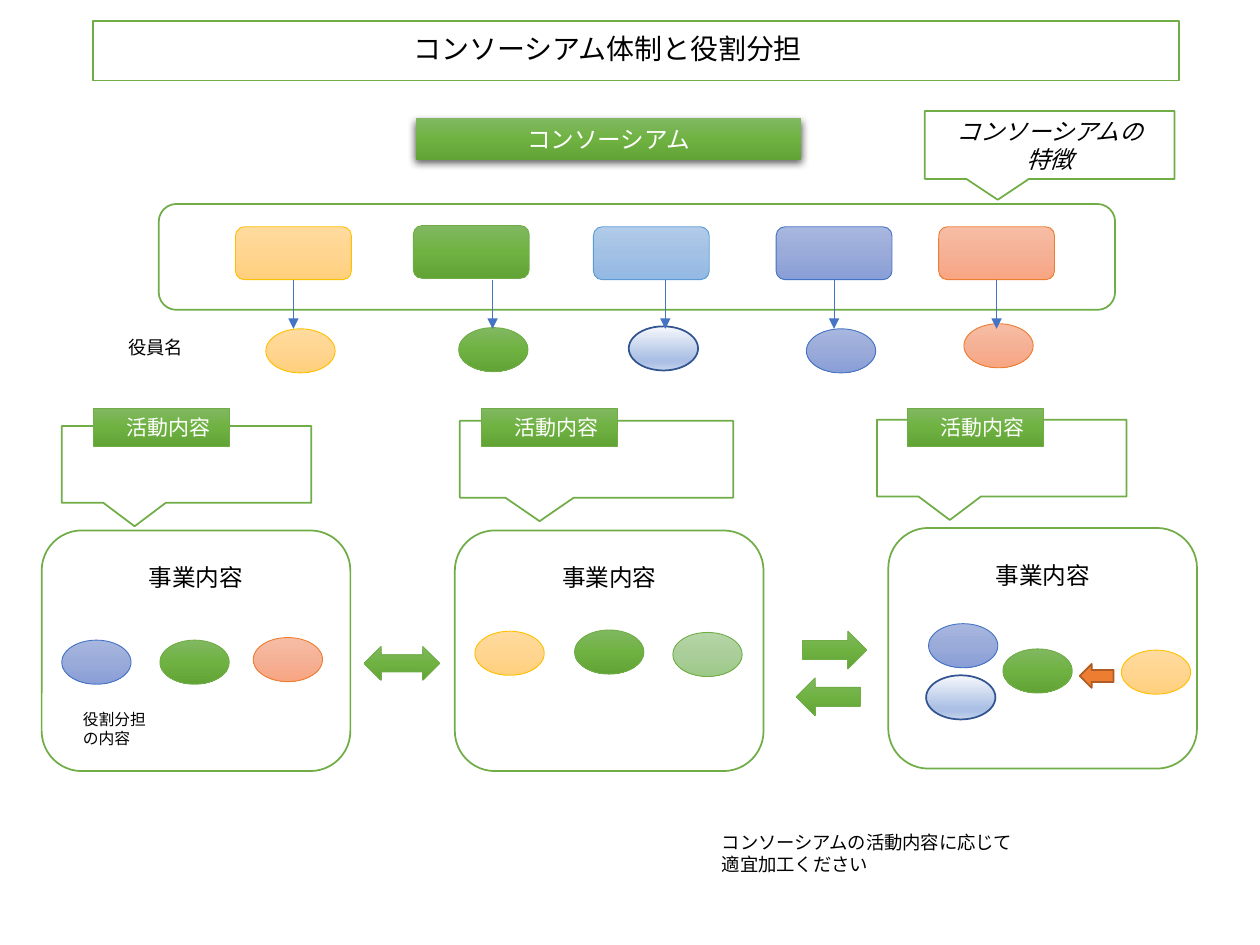
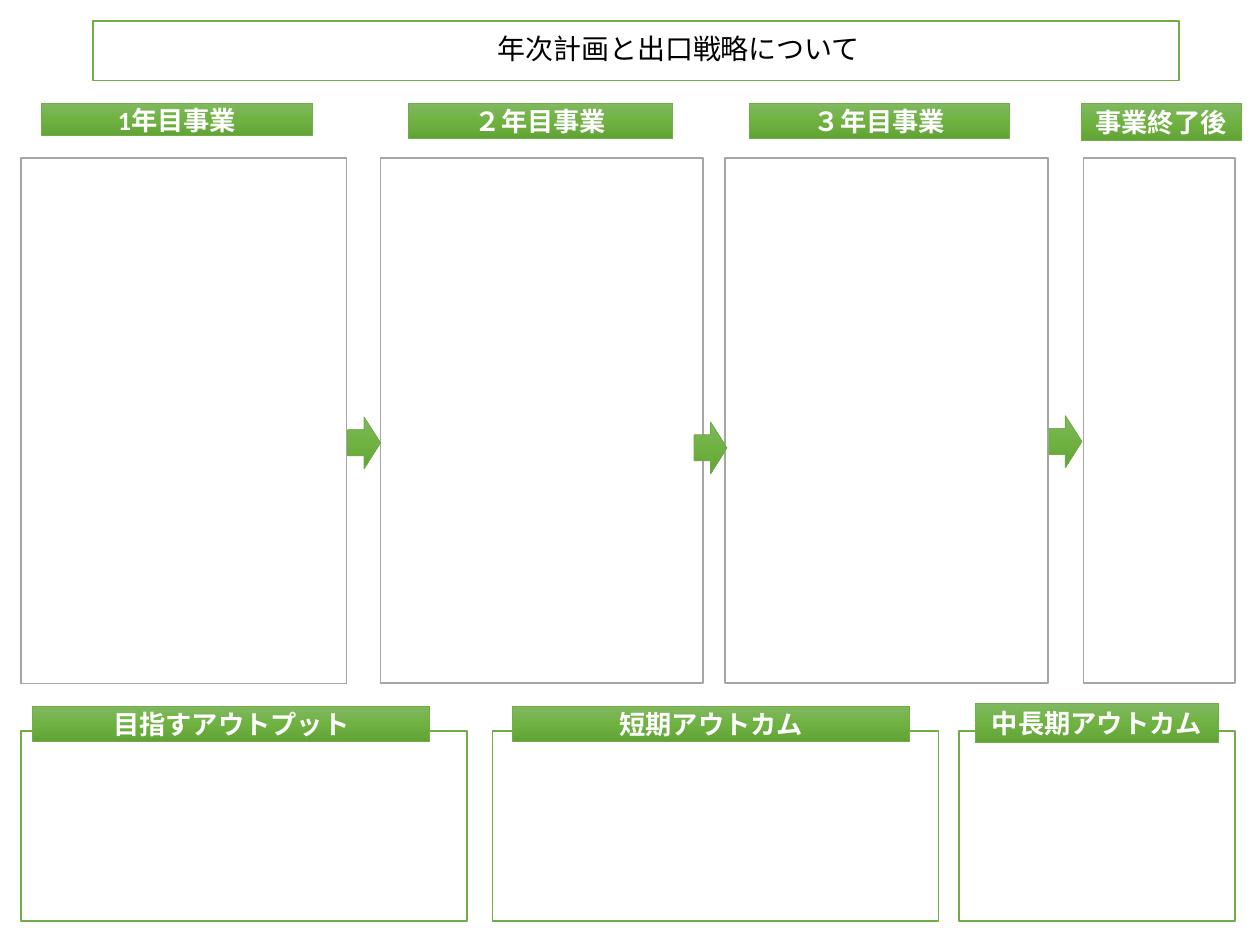
"""Build two slides: a consortium's structure and roles, and its yearly plan with exit strategy."""
from copy import deepcopy

from lxml.etree import SubElement
from pptx import Presentation
from pptx.dml.color import RGBColor
from pptx.enum.shapes import MSO_CONNECTOR, MSO_SHAPE
from pptx.enum.text import MSO_ANCHOR, PP_ALIGN
from pptx.oxml.ns import qn
from pptx.util import Pt

rgb = RGBColor.from_string
WHITE, BLACK, GREEN, BLUE = "FFFFFF", "000000", "70AD47", "4472C4"
LOOKS = {
    "gold": ([(0, "FFDB9E"), (0.5, "FFD590"), (1, "FFD07C")], "FFC000", 0.5),
    "green": ([(0, "81B861"), (0.5, "6FB242"), (1, "62A336")], GREEN, 0.5),
    "pale green": ([(0, "B5D5A7"), (0.5, "AACE9A"), (1, "9CC987")], GREEN, 0.5),
    "sky": ([(0, "B1CBE9"), (0.5, "A3C1E5"), (1, "93B9E4")], "5B9BD5", 0.5),
    "indigo": ([(0, "A8B7DF"), (0.5, "9AABD9"), (1, "889ED7")], BLUE, 0.5),
    "salmon": ([(0, "F7BDA5"), (0.5, "F5B196"), (1, "F8A582")], "ED7D31", 0.5),
    "glass": ([(0, "F6F8FC"), (0.74, "ABC0E4"), (0.83, "ABC0E4"),
               (0.89, "B6C8E7"), (1, "C7D5ED")], "325491", 1),
    "orange": ([(0, "ED7D31")], "AF5C24", 1),
    "outline": ([(0, WHITE)], GREEN, 1),
    "grey outline": ([(0, WHITE)], "A5A5A5", 1),
}


def place(slide, kind, box, look):
    """Add a preset shape at box, in points, painted with one of the looks."""
    shape = slide.shapes.add_shape(kind, *map(Pt, box))
    shape.shadow.inherit = False
    stops, line, width = LOOKS[look]
    if len(stops) == 1:
        shape.fill.solid()
        shape.fill.fore_color.rgb = rgb(stops[0][1])
    else:
        shape.fill.gradient()
        shape.fill.gradient_angle = 270
        stop_list = shape._element.spPr.find(".//" + qn("a:gsLst"))
        for _ in stops[2:]:
            stop_list.append(deepcopy(stop_list[0]))
        for stop, (position, colour) in zip(shape.fill.gradient_stops, stops):
            stop.position = position
            stop.color.rgb = rgb(colour)
    shape.line.color.rgb = rgb(line)
    shape.line.width = Pt(width)
    return shape


def write(shape, text, size, colour=BLACK, align=PP_ALIGN.CENTER, anchor=MSO_ANCHOR.MIDDLE):
    """Fill a shape with text, one paragraph a line, and return its text frame."""
    frame = shape.text_frame
    frame.text = text
    frame.word_wrap = True
    frame.vertical_anchor = anchor
    for paragraph in frame.paragraphs:
        paragraph.alignment = align
        paragraph.font.name = "Calibri"
        paragraph.font.size = Pt(size)
        paragraph.font.color.rgb = rgb(colour)
    return frame


deck = Presentation()
deck.slide_width, deck.slide_height = Pt(720), Pt(540)

slides = []
for heading, indent in [("コンソーシアム体制と役割分担", 176), ("年次計画と出口戦略について", 224)]:
    slide = deck.slides.add_slide(deck.slide_layouts[5])
    title = slide.shapes.title
    title.left, title.top, title.width, title.height = map(Pt, (53.3, 12.2, 620.6, 33.8))
    title.fill.solid()
    title.fill.fore_color.rgb = rgb(WHITE)
    title.line.color.rgb = rgb(GREEN)
    title.line.width = Pt(1)
    frame = write(title, heading, 16, align=PP_ALIGN.LEFT)
    frame.margin_left = Pt(7.2 + indent)
    frame.paragraphs[0].line_spacing = 0.9
    slides.append(slide)
structure, plan = slides

place(structure, MSO_SHAPE.ROUNDED_RECTANGLE, (90.7, 116.6, 546.5, 60.5), "outline")
members = [
    (134.6, 129.6, "gold", 151.9, 187.9, "gold", 167.8),
    (236.2, 128.9, "green", 262.1, 187.2, "green", 281.5),
    (339.1, 129.6, "sky", 359.3, 186.5, "glass", 380.2),
    (443.5, 129.6, "indigo", 460.8, 187.9, "indigo", 475.9),
    (536.4, 129.6, "salmon", 550.8, 185, "salmon", 568.1),
]
for left, top, look, officer_left, officer_top, officer_look, arrow_x in members:
    member = place(structure, MSO_SHAPE.ROUNDED_RECTANGLE, (left, top, 66.2, 30.2), look)
    place(structure, MSO_SHAPE.OVAL, (officer_left, officer_top, 39.6, 25.2), officer_look)
    centre = left + 33.1
    joined = abs(centre - arrow_x) < 2
    x = Pt(centre if joined else arrow_x)
    arrow = structure.shapes.add_connector(MSO_CONNECTOR.STRAIGHT, x, Pt(159.8), x, Pt(187.9))
    if joined:
        arrow.begin_connect(member, 2)
    arrow.line.color.rgb = rgb(BLUE)
    arrow.line.width = Pt(0.5)
    SubElement(arrow.line._get_or_add_ln(), qn("a:tailEnd"), type="triangle")
    SubElement(arrow._element.spPr, qn("a:effectLst"))

banner = place(structure, MSO_SHAPE.RECTANGLE, (237.6, 67.7, 220.3, 23.8), "green")
banner.line.fill.background()
write(banner, "コンソーシアム", 13.5, WHITE)
shadow = SubElement(banner._element.spPr.find(qn("a:effectLst")), qn("a:outerShdw"),
                    blurRad=str(Pt(4.5)), dist=str(Pt(1.5)), dir="5400000",
                    algn="ctr", rotWithShape="0")
shadow_colour = SubElement(shadow, qn("a:srgbClr"), val=BLACK)
SubElement(shadow_colour, qn("a:alpha"), val="63000")

for left, top in [(23.8, 303.1), (259.9, 303.1), (507.6, 301.7)]:
    project = place(structure, MSO_SHAPE.ROUNDED_RECTANGLE, (left, top, 176.4, 137.5), "outline")
    write(project, "事業内容", 13.5, anchor=MSO_ANCHOR.TOP).margin_top = Pt(12)

callouts = [
    (528.5, 63.4, 142.6, 38.9, "コンソーシアムの\n特徴"),
    (35.3, 243.4, 142.6, 43.9, ""),
    (262.8, 240.5, 156.2, 43.9, ""),
    (501.1, 239.8, 142.6, 43.9, ""),
]
for *box, feature in callouts:
    callout = place(structure, MSO_SHAPE.RECTANGULAR_CALLOUT, box, "outline")
    callout.adjustments[0], callout.adjustments[1] = -0.208, 0.806
    if feature:
        for paragraph in write(callout, feature, 13.5).paragraphs:
            paragraph.font.italic = True

for left in (53.3, 275, 518.4):
    activity = place(structure, MSO_SHAPE.RECTANGLE, (left, 233.3, 77.8, 21.6), "green")
    write(activity, "活動内容", 12, WHITE, PP_ALIGN.LEFT).margin_left = Pt(19.2)

participants = [
    (35.3, 365.8, "indigo"), (91.4, 365.8, "green"), (144.7, 364.3, "salmon"),
    (271.4, 360.7, "gold"), (328.3, 360, "green"), (384.5, 361.4, "pale green"),
    (530.6, 356.4, "indigo"), (529.2, 385.9, "glass"), (573.1, 370.8, "green"),
    (640.8, 371.5, "gold"),
]
for left, top, look in participants:
    place(structure, MSO_SHAPE.OVAL, (left, top, 39.6, 25.2), look)

exchanges = [
    (MSO_SHAPE.LEFT_RIGHT_ARROW, (208.1, 369.4, 43.2, 19.4), "green"),
    (MSO_SHAPE.RIGHT_ARROW, (458.6, 360.7, 36.7, 21.6), "green"),
    (MSO_SHAPE.LEFT_ARROW, (455, 387.4, 36.7, 21.6), "green"),
    (MSO_SHAPE.LEFT_ARROW, (617, 379.4, 19.4, 13.7), "orange"),
]
for kind, box, look in exchanges:
    place(structure, kind, box, look)

remarks = [
    ("役割分担の内容", 9, (40.3, 401.8, 51.1, 28.8)),
    ("役員名", 10.5, (66.2, 188.6, 64.8, 20.2)),
    ("コンソーシアムの活動内容に応じて適宜加工ください", 10.5, (405.4, 471.6, 185.8, 32.4)),
]
for remark, size, box in remarks:
    write(structure.shapes.add_textbox(*map(Pt, box)), remark, size,
          align=PP_ALIGN.LEFT, anchor=MSO_ANCHOR.TOP)

PROCESS, RECTANGLE = MSO_SHAPE.FLOWCHART_PROCESS, MSO_SHAPE.RECTANGLE
sections = [
    ("1年目事業", (23.8, 59, 154.8, 18.7), PROCESS, (12.2, 90.4, 185.8, 300.2)),
    ("２年目事業", (233.3, 59, 151.2, 20.2), PROCESS, (217.4, 90.3, 184.3, 300.2)),
    ("３年目事業", (428.4, 59, 148.3, 20.2), PROCESS, (414.5, 90.3, 184.3, 300.2)),
    ("事業終了後", (617.8, 59, 91.4, 21.6), PROCESS, (619.2, 90.3, 86.4, 300.2)),
    ("目指すアウトプット", (18.7, 403.4, 226.8, 20.2), RECTANGLE, (12.2, 417.6, 254.9, 108.7)),
    ("短期アウトカム", (293, 403.4, 226.8, 20.2), RECTANGLE, (281.5, 417.6, 254.9, 108.7)),
    ("中長期アウトカム", (557.3, 402.2, 139, 22.3), RECTANGLE, (547.9, 417.6, 157.7, 108.7)),
]
for label, label_box, kind, body_box in sections:
    place(plan, kind, body_box, "grey outline" if kind == PROCESS else "outline")
    header = place(plan, RECTANGLE, label_box, "green")
    frame = write(header, label, 15, WHITE)
    frame.paragraphs[0].font.bold = True
    frame.margin_left = frame.margin_right = Pt(5)
    frame.margin_top = frame.margin_bottom = Pt(2.9)

for left, top in [(198.7, 238.3), (396.7, 241.2), (599.5, 237.6)]:
    place(plan, MSO_SHAPE.RIGHT_ARROW, (left, top, 18.7, 29.5), "green")

deck.save("out.pptx")
